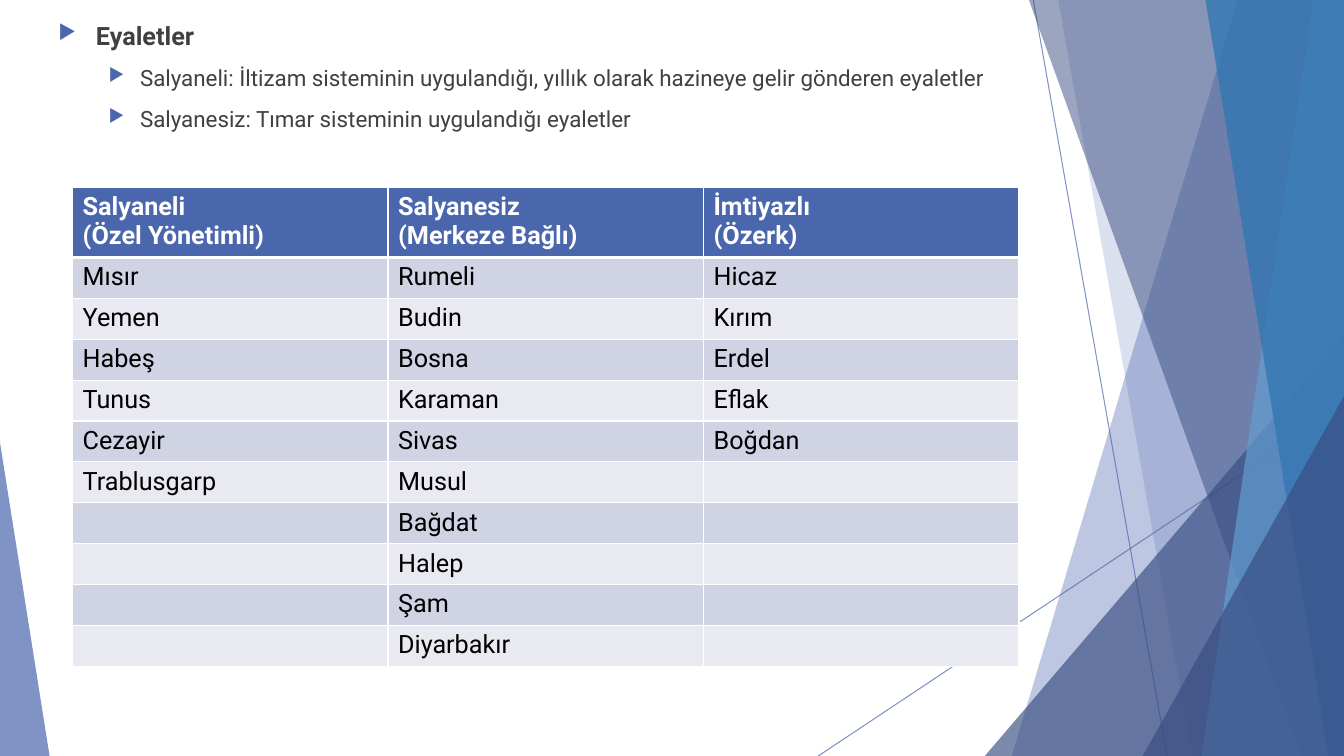
from dataclasses import dataclass
from itertools import zip_longest

from lxml import etree
from pptx import Presentation
from pptx import util as u
from pptx.dml.color import RGBColor
from pptx.enum import shapes, text
from pptx.oxml import ns

BLUE = RGBColor(0x4A, 0x66, 0xAC)
NAVY = RGBColor(0x38, 0x4C, 0x81)
SKY = RGBColor(0x62, 0x9D, 0xD1)
OCEAN = RGBColor(0x34, 0x77, 0xB2)
GREY = RGBColor(0x40, 0x40, 0x40)
BLACK = RGBColor(0, 0, 0)
WHITE = RGBColor(0xFF, 0xFF, 0xFF)
ROW_DARK = RGBColor(0xD0, 0xD3, 0xE3)
ROW_LIGHT = RGBColor(0xE9, 0xEA, 0xF1)

FONT = "Roboto"
PAGE_WIDTH = 33.87
PAGE_HEIGHT = 19.05
COLUMN_WIDTH = 7.95
HEADER_HEIGHT = 1.75
ROW_HEIGHT = 1.03


@dataclass(frozen=True)
class Ray:
    x1: float
    y1: float
    x2: float
    y2: float


@dataclass(frozen=True)
class Band:
    top_x: float
    bottom_x: float
    color: RGBColor
    opacity: int


@dataclass(frozen=True)
class Peak:
    left: float
    top: float
    width: float
    apex: float
    color: RGBColor
    opacity: int


@dataclass(frozen=True)
class Bullet:
    text: str
    level: int
    size: int
    margin: float
    hanging: float
    bold: bool


@dataclass(frozen=True)
class Column:
    heading: str
    provinces: tuple[str, ...]


BACKDROP = [
    Ray(26.04, 0, 29.41, PAGE_HEIGHT),
    Ray(PAGE_WIDTH, 10.24, 20.62, PAGE_HEIGHT),
    Band(31.19, 25.5, BLUE, 36),
    Band(26.67, 30.05, BLUE, 20),
    Peak(24.82, 8.46, 9.05, 1, NAVY, 66),
    Band(25.93, 32.79, NAVY, 50),
    Band(33.1, 30.28, SKY, 70),
    Band(30.38, 33.48, OCEAN, 80),
    Peak(28.8, 9.98, 5.07, 1, NAVY, 66),
    Peak(0, 11.15, 1.25, 0, BLUE, 70),
]

BULLETS = [
    Bullet("Eyaletler", 0, 18, 0.95, 0.95, True),
    Bullet("Salyaneli: İltizam sisteminin uygulandığı, yıllık olarak hazineye gelir gönderen eyaletler",
           1, 16, 2.06, 0.79, False),
    Bullet("Salyanesiz: Tımar sisteminin uygulandığı eyaletler", 1, 16, 2.06, 0.79, False),
]

COLUMNS = [
    Column("Salyaneli\n(Özel Yönetimli)",
           ("Mısır", "Yemen", "Habeş", "Tunus", "Cezayir", "Trablusgarp")),
    Column("Salyanesiz\n(Merkeze Bağlı)",
           ("Rumeli", "Budin", "Bosna", "Karaman", "Sivas", "Musul", "Bağdat", "Halep", "Şam", "Diyarbakır")),
    Column("İmtiyazlı\n(Özerk)", ("Hicaz", "Kırım", "Erdel", "Eflak", "Boğdan")),
]


def add_child(parent, tag: str, **attributes):
    return etree.SubElement(parent, ns.qn(tag), attributes)


def set_opacity(shape, opacity: int) -> None:
    for color in shape.element.spPr.iter(ns.qn("a:srgbClr")):
        add_child(color, "a:alpha", val=str(opacity * 1000))


def write(para, content: str, *, size: int, color: RGBColor, bold: bool = False) -> None:
    span = para.add_run()
    span.text = content
    span.font.name = FONT
    span.font.size = u.Pt(size)
    span.font.bold = bold
    span.font.color.rgb = color


def draw_ray(page, ray: Ray) -> None:
    line = page.shapes.add_connector(
        shapes.MSO_CONNECTOR.STRAIGHT, u.Cm(ray.x1), u.Cm(ray.y1), u.Cm(ray.x2), u.Cm(ray.y2))
    line.line.color.rgb = BLUE
    line.line.width = u.Pt(0.75)
    set_opacity(line, 70)
    add_child(line.element.spPr, "a:effectLst")


def paint(shape, color: RGBColor, opacity: int) -> None:
    shape.shadow.inherit = False
    shape.fill.solid()
    shape.fill.fore_color.rgb = color
    shape.line.fill.background()
    set_opacity(shape, opacity)


def draw_band(page, band: Band) -> None:
    outline = page.shapes.build_freeform(u.Cm(band.top_x), 0)
    corners = [(PAGE_WIDTH, 0), (PAGE_WIDTH, PAGE_HEIGHT), (band.bottom_x, PAGE_HEIGHT)]
    outline.add_line_segments([(u.Cm(x), u.Cm(y)) for x, y in corners], close=True)
    paint(outline.convert_to_shape(), band.color, band.opacity)


def draw_peak(page, peak: Peak) -> None:
    triangle = page.shapes.add_shape(
        shapes.MSO_SHAPE.ISOSCELES_TRIANGLE, u.Cm(peak.left), u.Cm(peak.top),
        u.Cm(peak.width), u.Cm(PAGE_HEIGHT - peak.top))
    triangle.adjustments[0] = peak.apex
    paint(triangle, peak.color, peak.opacity)


def draw_bullets(page, bullets: list[Bullet]) -> None:
    box = page.shapes.add_textbox(u.Cm(1.22), u.Cm(0.38), u.Cm(23.88), u.Cm(16.31))
    frame = box.text_frame
    frame.word_wrap = True
    frame.vertical_anchor = text.MSO_ANCHOR.TOP
    for index, bullet in enumerate(bullets):
        para = frame.add_paragraph() if index else frame.paragraphs[0]
        para.level = bullet.level
        para.space_before = u.Pt(10)
        write(para, bullet.text, size=bullet.size, color=GREY, bold=bullet.bold)
        props = para._p.get_or_add_pPr()
        props.set("marL", str(u.Cm(bullet.margin)))
        props.set("indent", str(-u.Cm(bullet.hanging)))
        add_child(add_child(props, "a:buClr"), "a:srgbClr", val=str(BLUE))
        add_child(props, "a:buSzPct", val="80000")
        add_child(props, "a:buChar", char="▶")


def set_borders(cell, top: int, bottom: int) -> None:
    props = cell._tc.get_or_add_tcPr()
    widths = {"a:lnL": 1, "a:lnR": 1, "a:lnT": top, "a:lnB": bottom}
    for index, (tag, width) in enumerate(widths.items()):
        border = add_child(props, tag, w=str(u.Pt(width)))
        add_child(add_child(border, "a:solidFill"), "a:srgbClr", val=str(WHITE))
        props.insert(index, border)


def draw_table(page, columns: list[Column]) -> None:
    rows = [[column.heading for column in columns],
            *zip_longest(*(column.provinces for column in columns), fillvalue="")]
    height = HEADER_HEIGHT + ROW_HEIGHT * (len(rows) - 1)
    table = page.shapes.add_table(
        len(rows), len(columns), u.Cm(1.83), u.Cm(4.71),
        u.Cm(COLUMN_WIDTH * len(columns)), u.Cm(height)).table
    for column in table.columns:
        column.width = u.Cm(COLUMN_WIDTH)
    for row_index, row in enumerate(rows):
        header = row_index == 0
        table.rows[row_index].height = u.Cm(HEADER_HEIGHT if header else ROW_HEIGHT)
        row_fill = BLUE if header else (ROW_LIGHT, ROW_DARK)[row_index % 2]
        for column_index, content in enumerate(row):
            cell = table.cell(row_index, column_index)
            cell.fill.solid()
            cell.fill.fore_color.rgb = row_fill
            set_borders(cell, 3 if row_index == 1 else 1, 3 if header else 1)
            for line_index, line in enumerate(content.splitlines()):
                frame = cell.text_frame
                para = frame.add_paragraph() if line_index else frame.paragraphs[0]
                write(para, line, size=18, color=WHITE if header else BLACK, bold=header)


def main() -> None:
    deck = Presentation()
    deck.slide_width = u.Cm(PAGE_WIDTH)
    deck.slide_height = u.Cm(PAGE_HEIGHT)
    page = deck.slides.add_slide(deck.slide_layouts[6])
    painters = {Ray: draw_ray, Band: draw_band, Peak: draw_peak}
    for item in BACKDROP:
        painters[type(item)](page, item)
    draw_bullets(page, BULLETS)
    draw_table(page, COLUMNS)
    deck.save("out.pptx")


if __name__ == "__main__":
    main()
